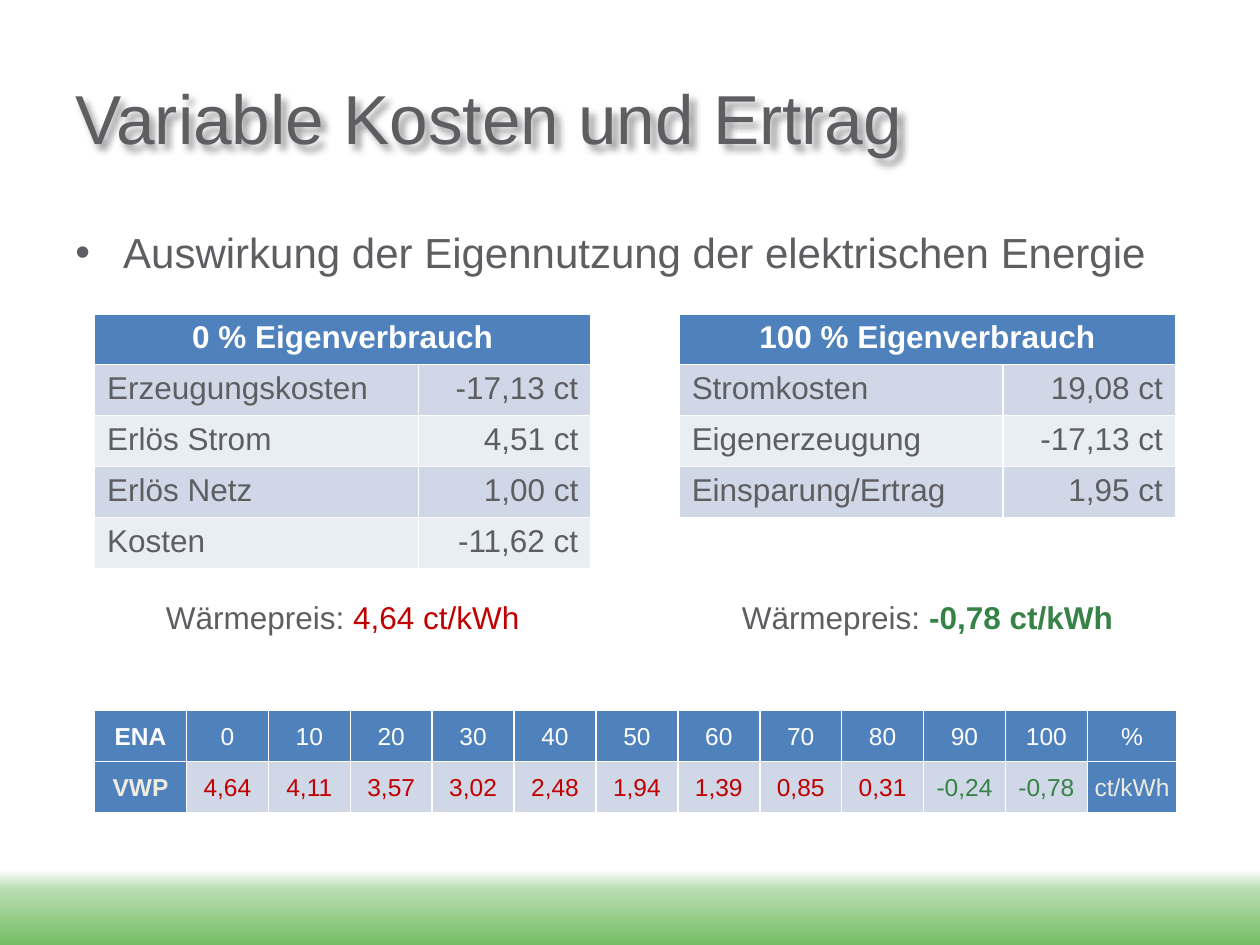
"""Build a slide on variable costs and yield with three tables."""
from pptx import Presentation
from pptx.dml.color import RGBColor as Rgb
from pptx.enum.shapes import MSO_SHAPE as Kind
from pptx.enum.text import MSO_ANCHOR as Anchor, PP_ALIGN as Align
from pptx.oxml import parse_xml as parse
from pptx.oxml.ns import nsdecls
from pptx.util import Inches, Pt

HUE = {"text": "5D5E61", "head": "4F81BD", "odd": "D0D8E8", "even": "E9EDF4",
       "white": "FFFFFF", "pale": "EEECE1", "red": "C00000", "green": "378246",
       "mint": "BADEB2", "leaf": "74BD65"}
WIDE, HIGH = Inches(10), Inches(7.5)
ROW = int(HIGH * 0.054)


def place(x, y, w, h):
    return [int(WIDE * x), int(HIGH * y), int(WIDE * w), int(HIGH * h)]


def write(box, *runs, size=18, align=Align.LEFT, anchor=Anchor.TOP, fill=None):
    """Put (text, colour, bold) runs into a text box or a table cell."""
    frame = box.text_frame
    frame.word_wrap = True
    box_like = box if hasattr(box, "vertical_anchor") else frame
    box_like.vertical_anchor = anchor
    if fill:
        box.fill.solid()
        box.fill.fore_color.rgb = Rgb.from_string(HUE[fill])
    else:
        box.fill.background()
    para = frame.paragraphs[0]
    para.alignment = align
    for text, hue, bold in runs:
        run = para.add_run()
        run.text = text
        font = run.font
        font.name, font.size, font.bold = "Arial", Pt(size), bold
        font.color.rgb = Rgb.from_string(HUE[hue])
    return para


deck = Presentation()
deck.slide_width, deck.slide_height = WIDE, HIGH
shapes = deck.slides.add_slide(deck.slide_layouts[6]).shapes

band = shapes.add_shape(Kind.RECTANGLE, *place(0, 0.92, 1, 0.08))
band.shadow.inherit = False
band.line.fill.background()
band.fill.gradient()
band.fill.gradient_angle = 270
stops = band.fill._fill._gradFill.gsLst
for stop in list(stops):
    stops.remove(stop)
for pos, hue in ((0, "white"), (26, "mint"), (100, "leaf")):
    stops.append(parse(f'<a:gs {nsdecls("a")} pos="{pos * 1000}">'
                       f'<a:srgbClr val="{HUE[hue]}"/></a:gs>'))

title = shapes.add_textbox(*place(0.05, 0.04, 0.7, 0.167))
write(title, ("Variable Kosten und Ertrag", "text", False), size=39.6,
      anchor=Anchor.MIDDLE)
title._element.spPr.append(parse(
    f'<a:effectLst {nsdecls("a")}><a:outerShdw blurRad="50800" dist="50800" '
    'dir="2700000" algn="tl" rotWithShape="0"><a:srgbClr val="000000">'
    '<a:alpha val="40000"/></a:srgbClr></a:outerShdw></a:effectLst>'))

body = shapes.add_textbox(*place(0.05, 0.233, 0.9, 0.66))
para = write(body, ("Auswirkung der Eigennutzung der elektrischen Energie", "text", False),
             size=24)
props = para._p.get_or_add_pPr()
props.set("marL", str(Inches(0.38)))
props.set("indent", str(-Inches(0.38)))
props.append(parse(f'<a:buFont {nsdecls("a")} typeface="Arial"/>'))
props.append(parse(f'<a:buChar {nsdecls("a")} char="•"/>'))

PLANS = [
    (0.539, "100 % Eigenverbrauch", ("-0,78 ct/kWh", "green", True),
     [("Stromkosten", "19,08 ct"), ("Eigenerzeugung", "-17,13 ct"),
      ("Einsparung/Ertrag", "1,95 ct"), None]),
    (0.075, "0 % Eigenverbrauch", ("4,64 ct/kWh", "red", False),
     [("Erzeugungskosten", "-17,13 ct"), ("Erlös Strom", "4,51 ct"),
      ("Erlös Netz", "1,00 ct"), ("Kosten", "-11,62 ct")]),
]
for left, head, price, items in PLANS:
    grid = shapes.add_table(7, 2, *place(left, 0.332, 0.394, 0.356)).table
    for col, share in zip(grid.columns, (0.257, 0.137)):
        col.width = int(WIDE * share)
    for row in grid.rows:
        row.height = ROW
    grid.rows[5].height = ROW // 2
    for line in (0, 5, 6):
        grid.cell(line, 0).merge(grid.cell(line, 1))
    write(grid.cell(0, 0), (head, "white", True), align=Align.CENTER, fill="head")
    for line, item in enumerate(items, 1):
        tone = ("even", "odd")[line % 2] if item else None
        for col, align in enumerate((Align.LEFT, Align.RIGHT)):
            runs = [(item[col], "text", False)] if item else []
            write(grid.cell(line, col), *runs, align=align, fill=tone)
    for col in range(2):
        gap = grid.cell(5, col)
        gap.margin_top = gap.margin_bottom = 0
        write(gap)._p.get_or_add_endParaRPr().set("sz", "800")
    write(grid.cell(6, 0), ("Wärmepreis: ", "text", False), price, align=Align.CENTER)

SHARES = ["ENA", *map(str, range(0, 101, 10)), "%"]
PRICES = ["VWP", "4,64", "4,11", "3,57", "3,02", "2,48", "1,94", "1,39", "0,85",
          "0,31", "-0,24", "-0,78", "ct/kWh"]
LAST = len(SHARES) - 1
scale = shapes.add_table(2, LAST + 1, *place(0.075, 0.752, 0.858, 0.108)).table
for col in range(LAST + 1):
    scale.columns[col].width = int(WIDE * {0: 0.073, LAST: 0.071}.get(col, 0.065))
    for line, texts in enumerate((SHARES, PRICES)):
        scale.rows[line].height = ROW
        cell, text = scale.cell(line, col), texts[col]
        cell.margin_left = cell.margin_right = cell.margin_top = Inches(0.01)
        cell.margin_bottom = 0
        label = line == 0 or col in (0, LAST)
        if label:
            hue = ("white", "pale")[line]
        else:
            hue = "green" if text.startswith("-") else "red"
        write(cell, (text, hue, col == 0), size=14, align=Align.CENTER,
              anchor=Anchor.MIDDLE, fill="head" if label else "odd")

deck.save("out.pptx")
